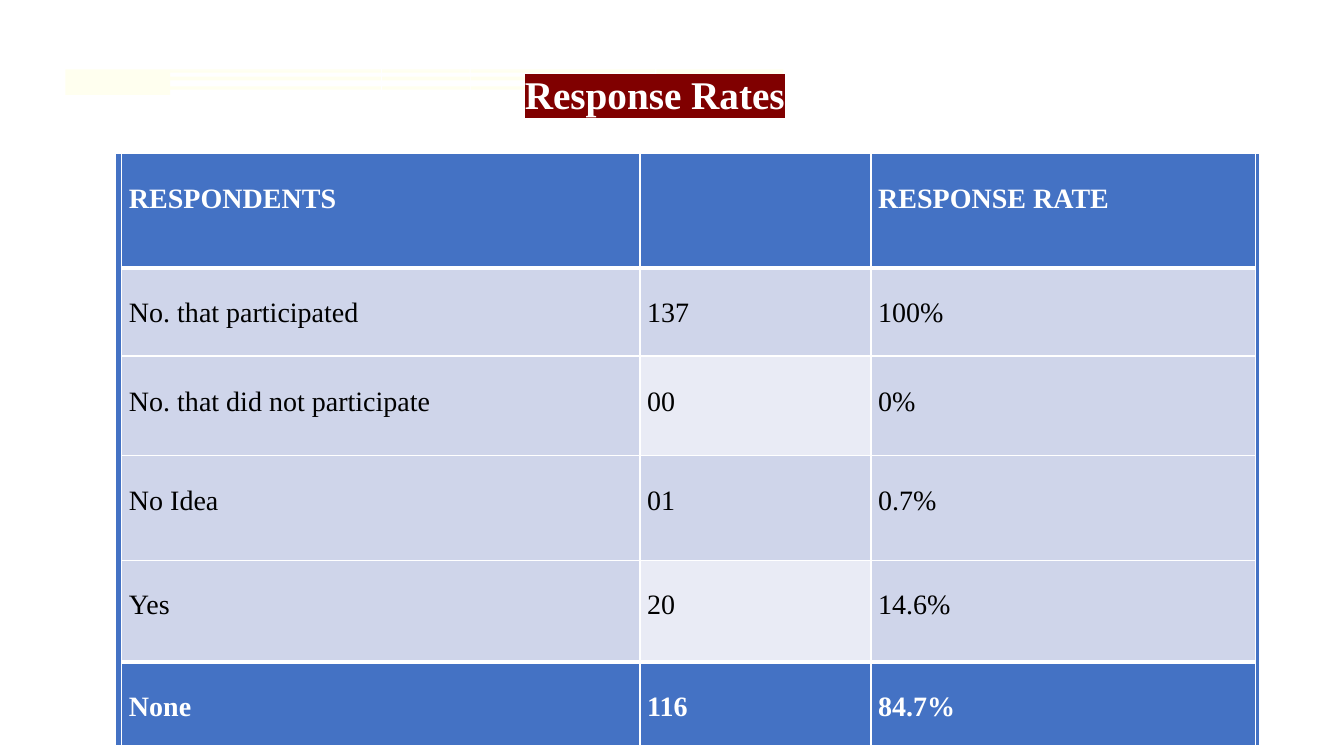
import pptx
import pptx.util
import pptx.dml.color
import pptx.enum.shapes
import pptx.enum.text
import pptx.oxml
import pptx.oxml.ns

Cm, Pt = pptx.util.Cm, pptx.util.Pt
FONT = "Times New Roman"
BLUE, PALE, LIGHT, WHITE, CREAM = "4472C4", "CFD5EA", "E9EBF5", "FFFFFF", "FFFFEF"


def rgb(value):
    return pptx.dml.color.RGBColor.from_string(value)


def add_border(cell, side, width):
    cell._tc.get_or_add_tcPr().append(pptx.oxml.parse_xml(
        f'<a:ln{side} {pptx.oxml.ns.nsdecls("a")} w="{Pt(width)}">'
        f'<a:solidFill><a:srgbClr val="{WHITE}"/></a:solidFill></a:ln{side}>'))


prs = pptx.Presentation()
prs.slide_width, prs.slide_height = Cm(33.87), Cm(19.05)
s = prs.slides.add_slide(prs.slide_layouts[5])

bar = s.shapes.add_group_shape()
sections = [(4.29, 9.6), (9.63, 11.84), (11.86, 16.51)]
boxes = [(1.65, 1.75, 4.29, 2.39), (16.54, 1.75, 19.74, 2.39)]
for left, right in sections:
    boxes += [(left, 1.93, right, 2.03), (left, 2.18, right, 2.26)]
fb = bar.shapes.build_freeform(Cm(boxes[0][0]), Cm(boxes[0][1]))
for i, (left, top, right, bottom) in enumerate(boxes):
    if i:
        fb.move_to(Cm(left), Cm(top))
    fb.add_line_segments([(Cm(right), Cm(top)), (Cm(right), Cm(bottom)), (Cm(left), Cm(bottom))])
shapes = [fb.convert_to_shape()]
for left, right in sections:
    for top, height in [(1.75, 0.03), (1.78, 0.05)]:
        shapes.append(bar.shapes.add_shape(
            pptx.enum.shapes.MSO_SHAPE.RECTANGLE, Cm(left), Cm(top), Cm(right - left), Cm(height)))
for sp in shapes:
    sp.shadow.inherit = False
    sp.fill.solid()
    sp.fill.fore_color.rgb = rgb(CREAM)
    sp.line.fill.background()

title = s.shapes.title
s.shapes.element.append(title.element)
title.left, title.top, title.width, title.height = Cm(8.03), Cm(1.55), Cm(16.94), Cm(1.45)
tf = title.text_frame
tf.text = "Response Rates"
tf.word_wrap = True
tf.auto_size = pptx.enum.text.MSO_AUTO_SIZE.NONE
tf.vertical_anchor = pptx.enum.text.MSO_ANCHOR.TOP
p = tf.paragraphs[0]
p.alignment = pptx.enum.text.PP_ALIGN.CENTER
p.line_spacing = 1.07
r = p.runs[0]
r.font.name, r.font.size, r.font.bold = FONT, Pt(28), True
r.font.color.rgb = rgb(WHITE)
r._r.get_or_add_rPr().find(pptx.oxml.ns.qn("a:solidFill")).addnext(pptx.oxml.parse_xml(
    f'<a:highlight {pptx.oxml.ns.nsdecls("a")}><a:srgbClr val="800000"/></a:highlight>'))

rows = [
    ("RESPONDENTS", "", "RESPONSE RATE"),
    ("No. that participated", "137", "100%"),
    ("No. that did not participate", "00", "0%"),
    ("No Idea", "01", "0.7%"),
    ("Yes", "20", "14.6%"),
    ("None", "116", "84.7%"),
]
col_widths = [0.15, 13.06, 5.82, 9.7, 0.08]
row_heights = [2.9, 2.21, 2.51, 2.64, 2.57, 2.11]
line_heights = [14.7, 14.4, 14.7, 14.6, 14.4, 10.8]
lines_above = [2, 2, 2, 2, 2, 3]
last = len(rows) - 1

table = s.shapes.add_table(len(rows), len(col_widths), Cm(2.92), Cm(3.86),
                           Cm(sum(col_widths)), Cm(sum(row_heights))).table
table.first_row = table.horz_banding = False
for col, width in zip(table.columns, col_widths):
    col.width = Cm(width)
for row, height in zip(table.rows, row_heights):
    row.height = Cm(height)

for i, texts in enumerate(rows):
    strong = i in (0, last)
    for j, text in enumerate(("", *texts, "")):
        cell = table.cell(i, j)
        edge = j in (0, 4)
        cell.margin_left = cell.margin_right = cell.margin_top = cell.margin_bottom = 0
        add_border(cell, "L", 1)
        add_border(cell, "R", 1)
        add_border(cell, "T", 3 if i in (1, last) and not edge else 1)
        add_border(cell, "B", 3 if i in (0, last - 1) and not edge else 1)
        cell.fill.solid()
        if strong or edge:
            cell.fill.fore_color.rgb = rgb(BLUE)
        else:
            cell.fill.fore_color.rgb = rgb(LIGHT if j == 2 and i % 2 == 0 else PALE)
        if text:
            cell.margin_left = Cm(0.18)
            cell.margin_top = Pt(line_heights[i] * lines_above[i])
            cell.text_frame.text = text
            p = cell.text_frame.paragraphs[0]
            p.line_spacing = Pt(line_heights[i])
            r = p.runs[0]
            r.font.name, r.font.size, r.font.bold = FONT, Pt(20), strong
            r.font.color.rgb = rgb(WHITE if strong else "000000")

for j in (0, 4):
    table.cell(0, j).merge(table.cell(last, j))

prs.save("out.pptx")
